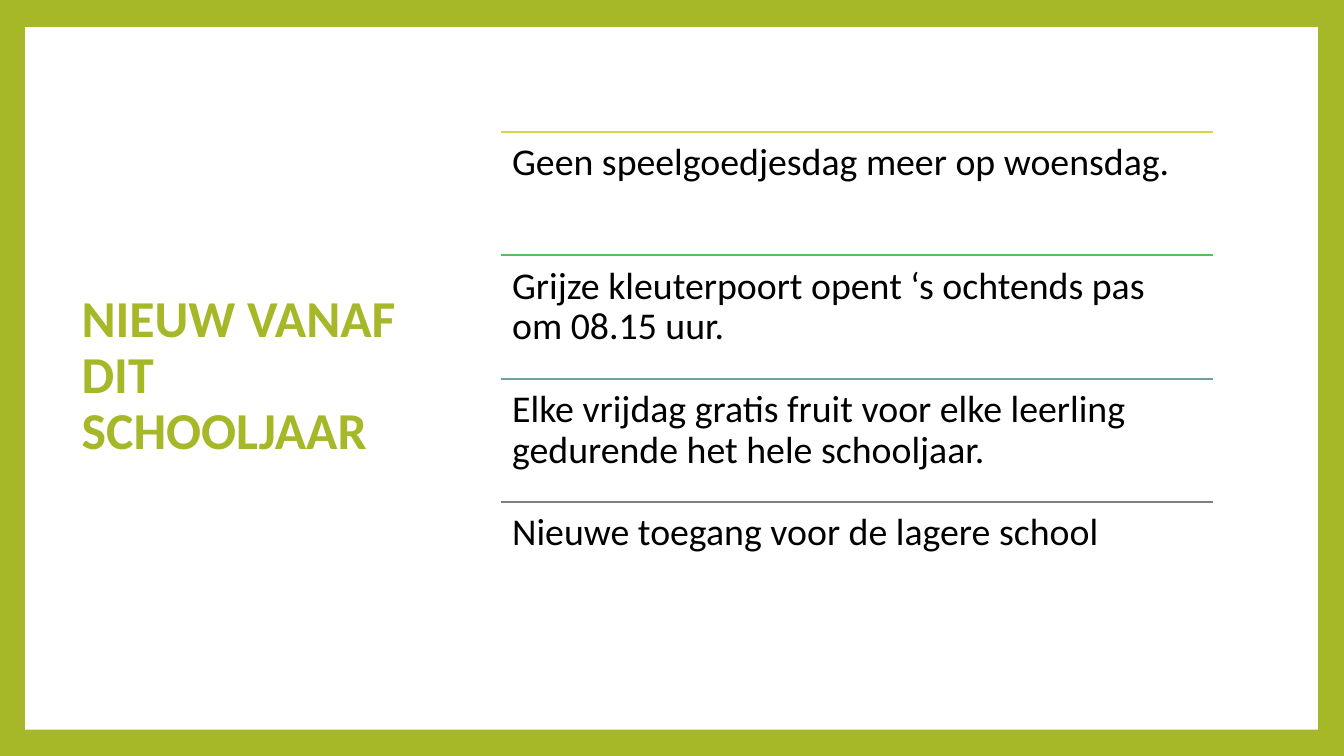
"""Build the slide listing what is new from this school year."""
from dataclasses import dataclass

from lxml import etree
from pptx import Presentation
from pptx import util as u
from pptx.dml.color import RGBColor
from pptx.enum import shapes, text
from pptx.oxml import ns
from pptx.slide import Slide
from pptx.text.text import TextFrame

COLOURS = {
    "green": "A6B727",
    "white": "FFFFFF",
    "black": "000000",
    "lime": "D7D447",
    "leaf": "5ABD59",
    "teal": "6CA1A0",
    "grey": "818183",
}
FONT = "Calibri"
LIST_LEFT, LIST_TOP, LIST_WIDTH, ROW_HEIGHT = 4.97, 1.31, 7.06, 1.223


@dataclass(frozen=True)
class Announcement:
    """A news item and the colour of the rule above it."""

    wording: str
    rule_colour: str


ANNOUNCEMENTS = [
    Announcement("Geen speelgoedjesdag meer op woensdag.", "lime"),
    Announcement("Grijze kleuterpoort opent ‘s ochtends pas om 08.15 uur.", "leaf"),
    Announcement(
        "Elke vrijdag gratis fruit voor elke leerling gedurende het hele schooljaar.", "teal"
    ),
    Announcement("Nieuwe toegang voor de lagere school", "grey"),
]


def rgb(name: str) -> RGBColor:
    """Return the named colour."""
    return RGBColor.from_string(COLOURS[name])


def write(frame: TextFrame, wording: str, size: int, colour: str, bold: bool = False) -> None:
    """Write one left-aligned paragraph into a wrapping frame."""
    frame.word_wrap = True
    frame.auto_size = text.MSO_AUTO_SIZE.NONE
    paragraph = frame.paragraphs[0]
    paragraph.alignment = text.PP_ALIGN.LEFT
    paragraph.line_spacing = 0.9
    run = paragraph.add_run()
    run.text = wording
    run.font.name = FONT
    run.font.size = u.Pt(size)
    run.font.bold = bold
    run.font.color.rgb = rgb(colour)


def add_frame_and_title(slide: Slide) -> None:
    """Draw the green border, the white panel and the title."""
    slide.background.fill.solid()
    slide.background.fill.fore_color.rgb = rgb("green")
    panel = slide.shapes.add_shape(
        shapes.MSO_SHAPE.RECTANGLE,
        u.Inches(0.25), u.Inches(0.27), u.Inches(12.82), u.Inches(6.97),
    )
    panel.shadow.inherit = False
    panel.fill.solid()
    panel.fill.fore_color.rgb = rgb("white")
    panel.line.fill.background()

    title = slide.shapes.title
    title.element.addprevious(panel.element)
    title.left, title.top = u.Inches(0.71), u.Inches(0.67)
    title.width, title.height = u.Inches(3.68), u.Inches(6.13)
    write(title.text_frame, "NIEUW VANAF DIT SCHOOLJAAR", 37, "green", bold=True)
    title.text_frame.vertical_anchor = text.MSO_ANCHOR.MIDDLE


def add_announcement(slide: Slide, item: Announcement, top: float) -> None:
    """Draw a coloured rule with the announcement below it."""
    left, y, width = u.Inches(LIST_LEFT), u.Inches(top), u.Inches(LIST_WIDTH)
    rule = slide.shapes.add_connector(
        shapes.MSO_CONNECTOR.STRAIGHT, left, y, left + width, y
    )
    rule.line.color.rgb = rgb(item.rule_colour)
    rule.line.width = u.Pt(1.5)
    etree.SubElement(rule.element.spPr, ns.qn("a:effectLst"))

    body = slide.shapes.add_textbox(left, y, width, u.Inches(ROW_HEIGHT)).text_frame
    body.margin_left = body.margin_right = u.Inches(0.11)
    body.margin_top = body.margin_bottom = u.Inches(0.11)
    write(body, item.wording, 27, "black")


def main() -> None:
    """Create and save the presentation."""
    deck = Presentation()
    deck.slide_width, deck.slide_height = u.Inches(13.33), u.Inches(7.5)
    slide = deck.slides.add_slide(deck.slide_layouts.get_by_name("Title Only"))
    add_frame_and_title(slide)
    for row, item in enumerate(ANNOUNCEMENTS):
        add_announcement(slide, item, LIST_TOP + row * ROW_HEIGHT)
    deck.save("out.pptx")


if __name__ == "__main__":
    main()
